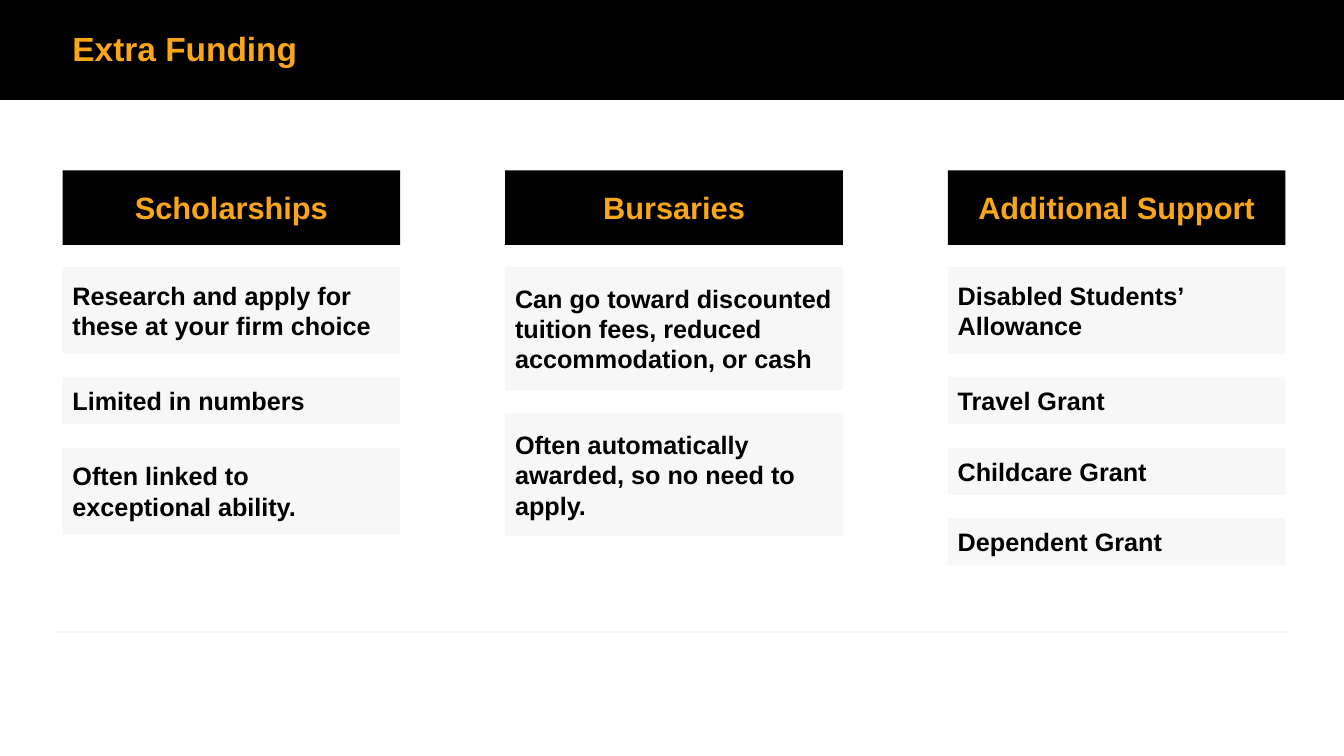
from lxml import etree
from pptx import Presentation
from pptx.dml.color import RGBColor
from pptx.enum import shapes, text
from pptx.oxml import ns
from pptx.util import Inches, Pt

HUES = {"black": "000000", "gold": "F9A618", "pale": "F6F7F6", "rule": "BD8531"}
HIGH = {1: 0.47, 2: 0.86, 3: 1.22}
LEFT, TOP, WIDE, STEP = 0.62, 1.69, 3.35, 4.39
HEAD, FIRST, GAP = 0.74, 2.65, 0.23
COLS = [
    ("Scholarships", [
        ("Research and apply for these at your firm choice", 2),
        ("Limited in numbers", 1),
        ("Often linked to exceptional ability.", 2),
    ]),
    ("Bursaries", [
        ("Can go toward discounted tuition fees, reduced accommodation, or cash", 3),
        ("Often automatically awarded, so no need to apply.", 3),
    ]),
    ("Additional Support", [
        ("Disabled Students’ Allowance", 2),
        ("Travel Grant", 1),
        ("Childcare Grant", 1),
        ("Dependent Grant", 1),
    ]),
]


def hue(name):
    """Return the colour with this name."""
    return RGBColor.from_string(HUES[name])


def write(shape, words, size, color, align=text.PP_ALIGN.LEFT):
    """Put one bold line of text in a shape, centred in height."""
    frame = shape.text_frame
    frame.word_wrap = True
    frame.vertical_anchor = text.MSO_ANCHOR.MIDDLE
    para = frame.paragraphs[0]
    para.text = words
    para.alignment = align
    font = para.font
    font.name, font.size, font.bold = "Arial", Pt(size), True
    font.color.rgb = hue(color)
    return para


def block(slide, x, y, w, h, fill):
    """Add a plain filled rectangle."""
    kind = shapes.MSO_SHAPE.RECTANGLE
    shape = slide.shapes.add_shape(kind, Inches(x), Inches(y), Inches(w), Inches(h))
    shape.shadow.inherit = False
    shape.fill.solid()
    shape.fill.fore_color.rgb = hue(fill)
    shape.line.fill.background()
    return shape


def rule(slide, x, y, end):
    """Add a faint level line."""
    kind = shapes.MSO_CONNECTOR.STRAIGHT
    line = slide.shapes.add_connector(kind, Inches(x), Inches(y), Inches(end), Inches(y))
    line.line.width = Pt(0.5)
    line.line.color.rgb = hue("rule")
    props = line._element.spPr
    tint = props.find(".//" + ns.qn("a:srgbClr"))
    etree.SubElement(tint, ns.qn("a:alpha"), val="18000")
    etree.SubElement(props, ns.qn("a:effectLst"))


def title(slide, words):
    """Add the black band and the slide title."""
    block(slide, 0, 0, 13.33, 0.99, "black")
    box = slide.shapes.add_textbox(Inches(LEFT), Inches(0.22), Inches(12.1), Inches(0.56))
    write(box, words, 23.9, "gold").line_spacing = 0.9


def column(slide, x, head, cards):
    """Add a heading with its stack of cards."""
    top = block(slide, x, TOP, WIDE, HEAD, "black")
    write(top, head, 22, "gold", text.PP_ALIGN.CENTER)
    y = FIRST
    for words, lines in cards:
        card = block(slide, x, y, WIDE, HIGH[lines], "pale")
        write(card, words, 18, "black")
        y += HIGH[lines] + GAP


def main():
    """Build and save the slide."""
    deck = Presentation()
    deck.slide_width, deck.slide_height = Inches(13.33), Inches(7.5)
    slide = deck.slides.add_slide(deck.slide_layouts[6])
    rule(slide, 0.56, 6.27, 12.77)
    title(slide, "Extra Funding")
    for i, (head, cards) in enumerate(COLS):
        column(slide, LEFT + i * STEP, head, cards)
    deck.save("out.pptx")


if __name__ == "__main__":
    main()
